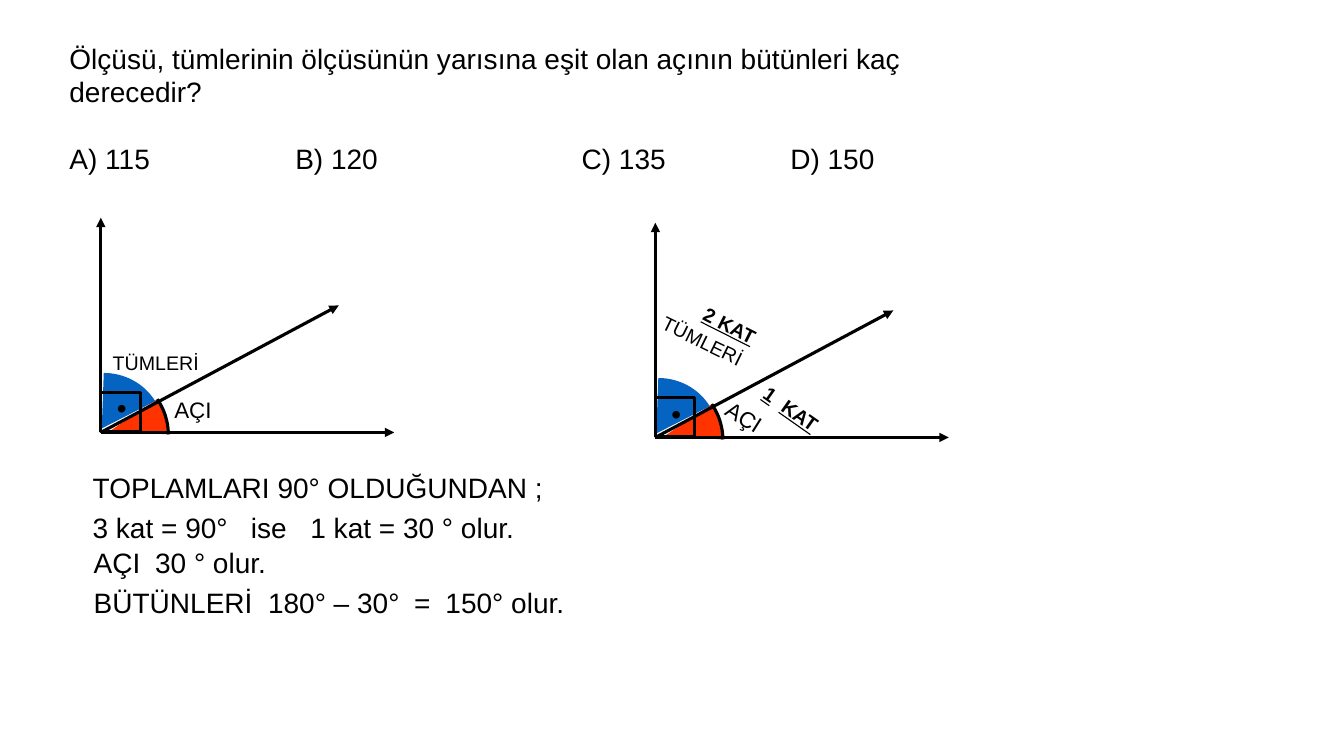
"""Build a slide that solves a complementary angle question with two angle figures."""
from dataclasses import dataclass

from lxml import etree
from pptx import Presentation
from pptx.dml.color import RGBColor
from pptx.enum.shapes import MSO_CONNECTOR as Conn, MSO_SHAPE as Shape
from pptx.enum.text import MSO_ANCHOR as Anchor, MSO_AUTO_SIZE as AutoSize
from pptx.oxml.ns import qn
from pptx.util import Inches, Pt

COLORS = {"ink": "000000", "angle": "FF3300", "complement": "0563C1"}
FONT = "Arial"
LINE_WIDTH = Pt(2.25)
Point = tuple[float, float]


@dataclass(frozen=True)
class Label:
    text: str
    left: float
    top: float
    width: float
    height: float
    size: int = 20
    rotation: float = 0
    strong: bool = False
    tabs: tuple[float, ...] = ()


@dataclass(frozen=True)
class Wedge:
    color: str
    center: Point
    curve: tuple[Point, Point, Point, Point]
    outlined: bool = False


VERTEX = (1.0, 4.29)
RAY_ENDS = ((3.91, 4.29), (1.0, 2.16), (3.36, 3.03))
FIGURE_OFFSETS = ((0, 0), (5.5, 0.05))
WEDGES = (
    Wedge("angle", (1.1, 4.27),
          ((1.56, 3.96), (1.63, 4.06), (1.67, 4.19), (1.67, 4.31)), True),
    Wedge("complement", (1.01, 4.25),
          ((1.03, 3.7), (1.23, 3.7), (1.43, 3.8), (1.54, 3.98))),
)
QUESTION = Label("Ölçüsü, tümlerinin ölçüsünün yarısına eşit olan açının bütünleri kaç derecedir?\n"
                 "A) 115\tB) 120\tC) 135\tD) 150",
                 0.59, 0.36, 8.66, 1.43, tabs=(2.24, 5.08, 7.15))
LABELS = (
    Label("AÇI", 1.63, 3.88, 0.79, 0.37, 16),
    Label("TÜMLERİ", 1.02, 3.43, 1.5, 0.33, 14),
    Label("AÇI", 7.08, 4.01, 0.79, 0.37, 16, 32.1),
    Label("TÜMLERİ", 6.42, 3.31, 1.5, 0.33, 14, 26),
    Label("2 KAT", 6.86, 3.09, 0.87, 0.33, 14, 26.8, True),
    Label("1\tKAT", 7.44, 3.91, 0.87, 0.33, 14, 35.2, True, (0.22,)),
    Label("TOPLAMLARI 90° OLDUĞUNDAN ;", 0.82, 4.62, 5.12, 0.43),
    Label("3 kat = 90°\tise\t1 kat = 30 ° olur.", 0.82, 5.02, 5.12, 0.43, tabs=(1.57, 2.16)),
    Label("AÇI\t30 ° olur.", 0.83, 5.36, 5.12, 0.43, tabs=(0.61,)),
    Label("BÜTÜNLERİ\t180° – 30°\t=\t150° olur.", 0.83, 5.76, 5.12, 0.43,
          tabs=(1.73, 3.18, 3.49)),
)


def rgb(name: str) -> RGBColor:
    return RGBColor.from_string(COLORS[name])


def shift(point: Point, offset: Point) -> Point:
    return point[0] + offset[0], point[1] + offset[1]


def emu(point: Point) -> tuple[int, int]:
    return Inches(point[0]), Inches(point[1])


def set_line(sp) -> None:
    sp.line.color.rgb = rgb("ink")
    sp.line.width = LINE_WIDTH


def add_label(shapes, label: Label):
    sp = shapes.add_textbox(Inches(label.left), Inches(label.top),
                            Inches(label.width), Inches(label.height))
    sp.rotation = label.rotation
    tf = sp.text_frame
    tf.word_wrap = True
    tf.auto_size = AutoSize.SHAPE_TO_FIT_TEXT
    tf.text = label.text
    for p in tf.paragraphs:
        if label.tabs:
            tab_list = etree.SubElement(p._p.get_or_add_pPr(), qn("a:tabLst"))
            for position in label.tabs:
                etree.SubElement(tab_list, qn("a:tab"), pos=str(Inches(position)), algn="l")
        for r in p.runs:
            r.font.name = FONT
            r.font.size = Pt(label.size)
            r.font.color.rgb = rgb("ink")
            if label.strong:
                r.font.bold = r.font.underline = True
    return sp


def bezier(curve: tuple[Point, ...], steps: int = 16) -> list[Point]:
    points = []
    for t in (i / steps for i in range(steps + 1)):
        weights = ((1 - t) ** 3, 3 * t * (1 - t) ** 2, 3 * t * t * (1 - t), t ** 3)
        points.append((sum(w * c[0] for w, c in zip(weights, curve)),
                       sum(w * c[1] for w, c in zip(weights, curve))))
    return points


def add_outline(shapes, points: list[Point], close: bool):
    builder = shapes.build_freeform(*emu(points[0]))
    builder.add_line_segments([emu(point) for point in points[1:]], close=close)
    sp = builder.convert_to_shape()
    sp.shadow.inherit = False
    return sp


def add_wedge(shapes, wedge: Wedge, offset: Point) -> None:
    arc = [shift(point, offset) for point in bezier(wedge.curve)]
    sp = add_outline(shapes, arc + [shift(wedge.center, offset)], True)
    sp.fill.solid()
    sp.fill.fore_color.rgb = rgb(wedge.color)
    sp.line.fill.background()
    if wedge.outlined:
        edge = add_outline(shapes, arc, False)
        edge.fill.background()
        set_line(edge)


def add_ray(shapes, start: Point, end: Point) -> None:
    ray = shapes.add_connector(Conn.STRAIGHT, *emu(start), *emu(end))
    set_line(ray)
    etree.SubElement(ray.line._get_or_add_ln(), qn("a:tailEnd"), type="triangle")
    etree.SubElement(ray._element.spPr, qn("a:effectLst"))


def add_figure(shapes, offset: Point) -> None:
    for wedge in WEDGES:
        add_wedge(shapes, wedge, offset)
    for end in RAY_ENDS:
        add_ray(shapes, shift(VERTEX, offset), shift(end, offset))
    side = Inches(0.39)
    square = shapes.add_shape(Shape.RECTANGLE, *emu(shift((1.0, 3.89), offset)), side, side)
    square.shadow.inherit = False
    square.fill.background()
    set_line(square)
    add_label(shapes, Label("•", *shift((1.06, 3.83), offset), 0.39, 0.43))


def main() -> None:
    prs = Presentation()
    prs.slide_width, prs.slide_height = Inches(13.33), Inches(7.5)
    shapes = prs.slides.add_slide(prs.slide_layouts[6]).shapes
    tf = add_label(shapes, QUESTION).text_frame
    tf.vertical_anchor = Anchor.MIDDLE
    tf.paragraphs[1].space_before = Pt(24)
    for offset in FIGURE_OFFSETS:
        add_figure(shapes, offset)
    for label in LABELS:
        add_label(shapes, label)
    prs.save("out.pptx")


if __name__ == "__main__":
    main()
